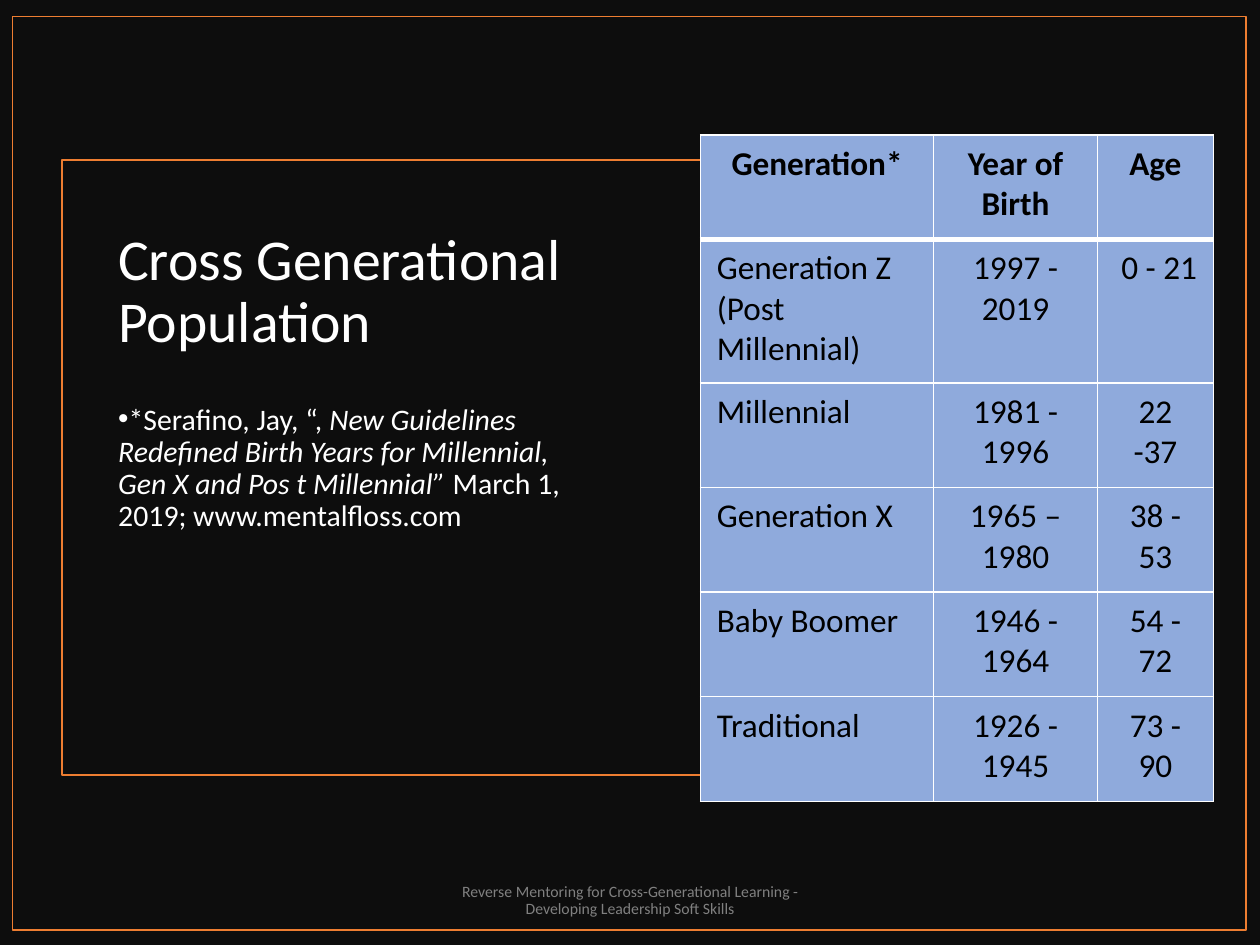
"""Build the Cross Generational Population slide."""
from lxml.etree import SubElement
from pptx import Presentation
from pptx.dml.color import RGBColor
from pptx.enum.shapes import MSO_SHAPE
from pptx.enum.text import MSO_ANCHOR, PP_ALIGN
from pptx.oxml.ns import qn
from pptx.util import Inches, Pt

FONT = "Calibri"
BLACK = RGBColor(0x00, 0x00, 0x00)
NEAR_BLACK = RGBColor(0x0D, 0x0D, 0x0D)
WHITE = RGBColor(0xFF, 0xFF, 0xFF)
GRAY = RGBColor(0x80, 0x80, 0x80)
ORANGE = RGBColor(0xED, 0x7D, 0x31)
BLUE = RGBColor(0x8F, 0xAA, 0xDC)

TITLE = "Cross Generational Population"
CITATION = [
    ("*Serafino, Jay, “, ", False),
    ("New Guidelines Redefined Birth Years for Millennial, Gen X and Pos t Millennial” ", True),
    ("March 1, 2019; www.mentalfloss.com", False),
]
FOOTER = "Reverse Mentoring for Cross-Generational Learning - Developing Leadership Soft Skills"
GENERATIONS = [
    ("Generation*", "Year of Birth", "Age"),
    ("Generation Z\n(Post Millennial)", "1997 - 2019", " 0 - 21"),
    ("Millennial", "1981 - 1996", "22 -37"),
    ("Generation X", "1965 – 1980", "38 - 53"),
    ("Baby Boomer", "1946 - 1964", "54 - 72"),
    ("Traditional", "1926 - 1945", "73 - 90"),
]
COLUMN_WIDTHS = (1.85, 1.3, 0.92)
ROW_HEIGHTS = (0.83, 1.14, 0.83, 0.83, 0.83, 0.83)


def set_font(paragraph, size, color, bold=False):
    font = paragraph.font
    font.name, font.size, font.bold = FONT, Pt(size), bold
    font.color.rgb = color


def add_rectangle(slide, box, fill=None, line=None):
    rectangle = slide.shapes.add_shape(MSO_SHAPE.RECTANGLE, *map(Inches, box))
    rectangle.shadow.inherit = False
    if fill is None:
        rectangle.fill.background()
    else:
        rectangle.fill.solid()
        rectangle.fill.fore_color.rgb = fill
    if line is None:
        rectangle.line.fill.background()
    else:
        rectangle.line.color.rgb = line
        rectangle.line.width = Pt(1)


def add_text(slide, box, runs, size, color, anchor, align=PP_ALIGN.LEFT, after=0, bullet=False):
    frame = slide.shapes.add_textbox(*map(Inches, box)).text_frame
    frame.word_wrap = True
    frame.vertical_anchor = anchor
    paragraph = frame.paragraphs[0]
    paragraph.alignment = align
    paragraph.line_spacing = 0.9
    paragraph.space_after = Pt(after)
    if bullet:
        properties = paragraph._p.get_or_add_pPr()
        properties.set("marL", "0")
        properties.set("indent", str(-Inches(0.25)))
        SubElement(properties, qn("a:buFont"), typeface="Arial")
        SubElement(properties, qn("a:buChar"), char="•")
    set_font(paragraph, size, color)
    for text, italic in runs:
        run = paragraph.add_run()
        run.text = text
        if italic:
            run.font.italic = True


def set_borders(cell, top, bottom):
    properties = cell._tc.get_or_add_tcPr()
    for side, width in (("L", 1), ("R", 1), ("T", top), ("B", bottom)):
        border = SubElement(properties, qn(f"a:ln{side}"), w=str(Pt(width)))
        SubElement(SubElement(border, qn("a:solidFill")), qn("a:srgbClr"), val=str(WHITE))


def add_generation_table(slide):
    table = slide.shapes.add_table(
        len(GENERATIONS), len(COLUMN_WIDTHS), Inches(5.56), Inches(1.07),
        Inches(sum(COLUMN_WIDTHS)), Inches(sum(ROW_HEIGHTS))).table
    for column, width in zip(table.columns, COLUMN_WIDTHS):
        column.width = Inches(width)
    for row, height in zip(table.rows, ROW_HEIGHTS):
        row.height = Inches(height)
    for r, entries in enumerate(GENERATIONS):
        for c, entry in enumerate(entries):
            cell = table.cell(r, c)
            set_borders(cell, 3 if r == 1 else 1, 3 if r == 0 else 1)
            cell.fill.solid()
            cell.fill.fore_color.rgb = BLUE
            cell.margin_left = cell.margin_right = Inches(0.13)
            cell.margin_top = cell.margin_bottom = Inches(0.07)
            cell.text = entry
            for paragraph in cell.text_frame.paragraphs:
                paragraph.alignment = PP_ALIGN.LEFT if r and c == 0 else PP_ALIGN.CENTER
                set_font(paragraph, 19, BLACK, bold=r == 0)


def main():
    deck = Presentation()
    deck.slide_width, deck.slide_height = Inches(10), Inches(7.5)
    slide = deck.slides.add_slide(deck.slide_layouts[6])
    add_rectangle(slide, (0, 0, 10, 7.5), fill=NEAR_BLACK)
    add_text(slide, (0.84, 1.53, 3.86, 1.34), [(TITLE, False)], 33, WHITE, MSO_ANCHOR.BOTTOM)
    add_text(slide, (0.84, 3.16, 3.86, 2.55), CITATION, 17, WHITE, MSO_ANCHOR.TOP,
             after=6, bullet=True)
    add_text(slide, (3.38, 6.95, 3.24, 0.4), [(FOOTER, False)], 9, GRAY, MSO_ANCHOR.MIDDLE,
             align=PP_ALIGN.CENTER, after=6)
    for frame_box in ((0.1, 0.13, 9.79, 7.25), (0.49, 1.27, 9.01, 4.88)):
        add_rectangle(slide, frame_box, line=ORANGE)
    add_generation_table(slide)
    deck.save("out.pptx")


if __name__ == "__main__":
    main()
